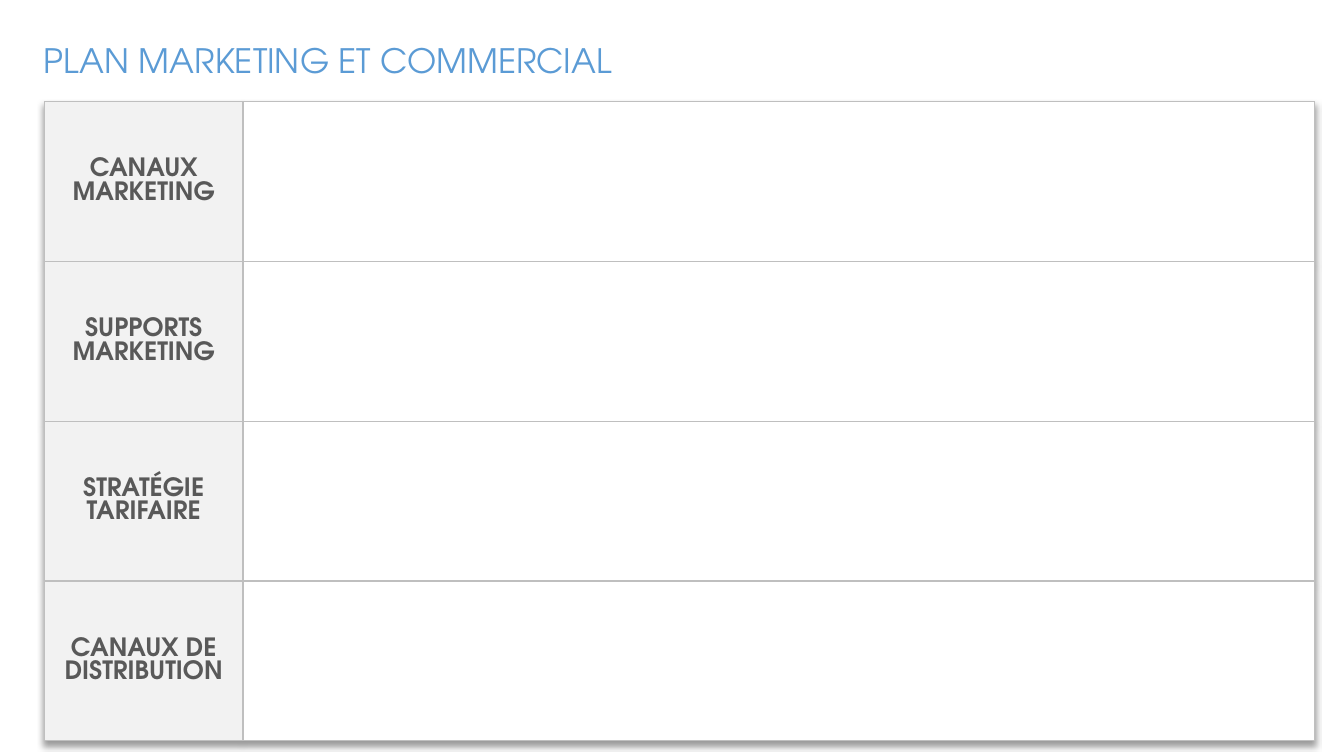
import pptx
import pptx.util
import pptx.dml.color
import pptx.enum.text
from pptx.oxml import parse_xml

Inches, Pt = pptx.util.Inches, pptx.util.Pt
RGBColor = pptx.dml.color.RGBColor
Align, Anchor = pptx.enum.text.PP_ALIGN, pptx.enum.text.MSO_ANCHOR

TITLE = "PLAN MARKETING ET COMMERCIAL"
TOPICS = [
    "CANAUX MARKETING",
    "SUPPORTS MARKETING",
    "STRATÉGIE TARIFAIRE",
    "CANAUX DE DISTRIBUTION",
]
FONT = "TeX Gyre Adventor"
BLUE = RGBColor(0x5B, 0x9B, 0xD5)
DARK = RGBColor(0x59, 0x59, 0x59)
PALE = RGBColor(0xF2, 0xF2, 0xF2)
WHITE = RGBColor(0xFF, 0xFF, 0xFF)
GREY = RGBColor(0xBF, 0xBF, 0xBF)
COLS = (1.97, 10.63)
HEIGHT = 6.34
NS = 'xmlns:a="http://schemas.openxmlformats.org/drawingml/2006/main"'


def style(par, size, color, align, bold=False):
    par.alignment = align
    font = par.font
    font.name, font.size, font.bold = FONT, Pt(size), bold
    font.color.rgb = color


def frame(cell):
    """Draw a thin grey border on all four sides of a cell."""
    props = cell._tc.get_or_add_tcPr()
    for pos, side in enumerate("LRTB"):
        props.insert(pos, parse_xml(
            f'<a:ln{side} {NS} w="{Pt(1)}"><a:solidFill>'
            f'<a:srgbClr val="{GREY}"/></a:solidFill></a:ln{side}>'))


def shade(table):
    """Put a soft shadow under the whole table."""
    table._tbl.tblPr.insert(0, parse_xml(
        f'<a:effectLst {NS}><a:outerShdw blurRad="{Pt(4)}" dist="{Pt(3)}" '
        'dir="5400000" algn="t" rotWithShape="0"><a:srgbClr val="000000">'
        '<a:alpha val="40000"/></a:srgbClr></a:outerShdw></a:effectLst>'))


deck = pptx.Presentation()
deck.slide_width, deck.slide_height = Inches(13.33), Inches(7.5)
slide = deck.slides.add_slide(deck.slide_layouts[5])

title = slide.shapes.title
title.left, title.top = Inches(0.33), Inches(0.35)
title.width, title.height = Inches(8.08), Inches(0.5)
text = title.text_frame
text.text = TITLE
text.vertical_anchor = Anchor.TOP
text.auto_size = pptx.enum.text.MSO_AUTO_SIZE.SHAPE_TO_FIT_TEXT
style(text.paragraphs[0], 24, BLUE, Align.LEFT)

table = slide.shapes.add_table(
    len(TOPICS), len(COLS), Inches(0.44), Inches(1.01),
    Inches(sum(COLS)), Inches(HEIGHT)).table
table.first_row = table.horz_banding = False
shade(table)
for col, width in zip(table.columns, COLS):
    col.width = Inches(width)
for row, topic in zip(table.rows, TOPICS):
    row.height = Inches(HEIGHT / len(TOPICS))
    for cell, fill in zip(row.cells, (PALE, WHITE)):
        cell.fill.solid()
        cell.fill.fore_color.rgb = fill
        frame(cell)
    head = row.cells[0]
    head.text = topic
    head.vertical_anchor = Anchor.MIDDLE
    style(head.text_frame.paragraphs[0], 18, DARK, Align.CENTER, True)

deck.save("out.pptx")
